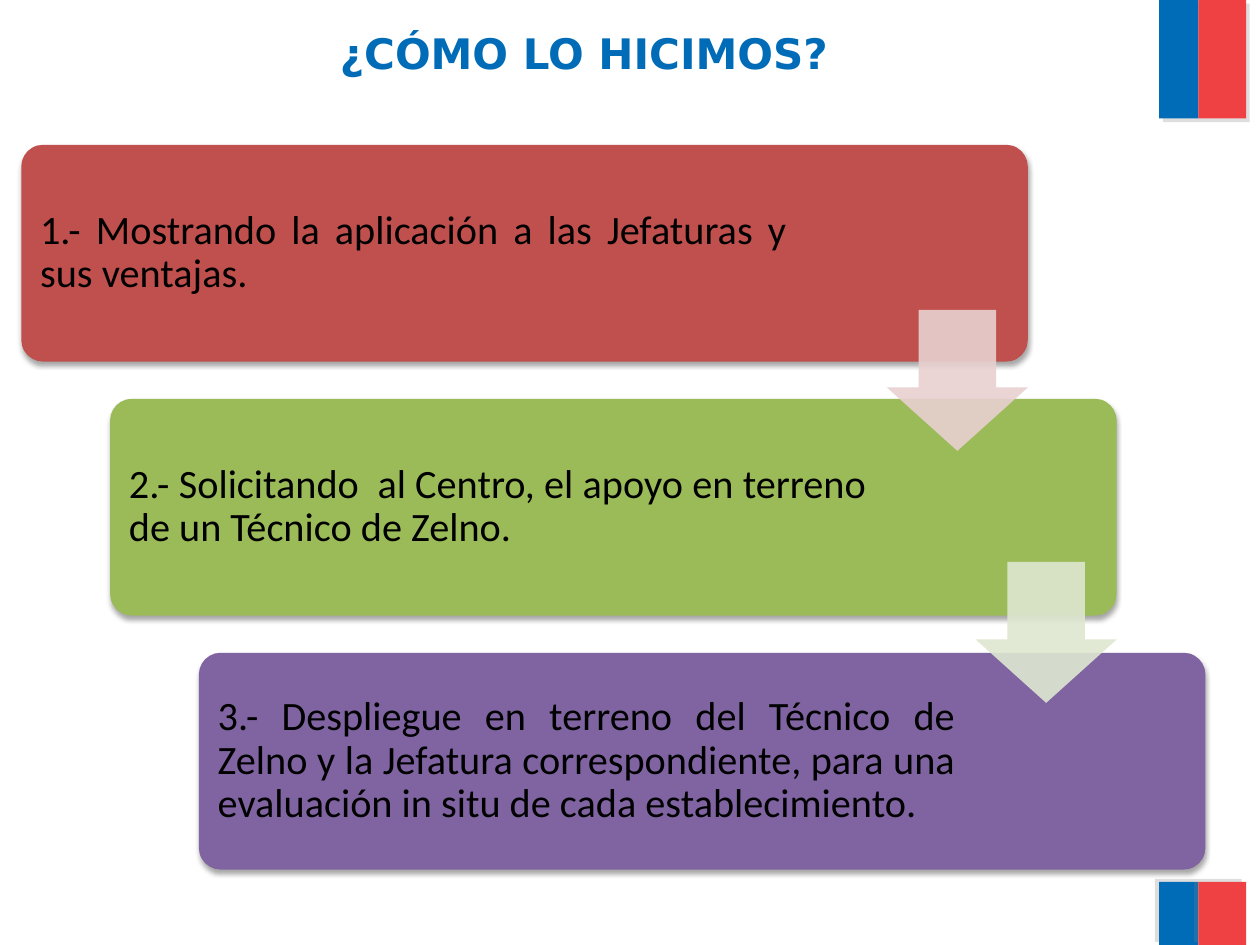
from dataclasses import dataclass

from pptx import Presentation
from pptx.dml.color import RGBColor
from pptx.enum.shapes import MSO_SHAPE
from pptx.enum.text import MSO_ANCHOR, PP_ALIGN
from pptx.oxml import parse_xml
from pptx.oxml.ns import nsdecls
from pptx.util import Cm, Pt


@dataclass(frozen=True)
class Theme:
    blue: str = "006CB7"
    red: str = "EF4144"
    ink: str = "000000"
    steps: tuple = ("C0504D", "9BBB59", "8064A2")
    hints: tuple = ("E8D0D0", "DEE7D1")
    head: str = "DejaVu Sans"
    body: str = "Calibri"
    big: float = 24
    mid: float = 23


THEME = Theme()
TEXTS = (
    "1.- Mostrando la aplicación a las Jefaturas y sus ventajas.",
    "2.- Solicitando  al Centro, el apoyo en terreno de un Técnico de Zelno.",
    "3.- Despliegue en terreno del Técnico de Zelno y la Jefatura "
    "correspondiente, para una evaluación in situ de cada establecimiento.",
)


def apply(item, style):
    for name, value in style.items():
        setattr(item, name, value)


def add_shade(shape, color, alpha, blur, dist, angle):
    """Give the shape an outer shadow: alpha in %, blur and dist in points."""
    props = shape._element.spPr
    for old in props.findall("{*}effectLst"):
        props.remove(old)
    props.append(parse_xml(
        f'<a:effectLst {nsdecls("a")}><a:outerShdw blurRad="{Pt(blur)}" '
        f'dist="{Pt(dist)}" dir="{angle * 60000}" algn="ctr" rotWithShape="0">'
        f'<a:srgbClr val="{color}"><a:alpha val="{alpha * 1000}"/></a:srgbClr>'
        '</a:outerShdw></a:effectLst>'))


def add_box(slide, kind, place, color, adjust=()):
    shape = slide.shapes.add_shape(kind, *map(Cm, place))
    shape.shadow.inherit = False
    shape.fill.solid()
    shape.fill.fore_color.rgb = RGBColor.from_string(color)
    shape.line.fill.background()
    for i, value in enumerate(adjust):
        shape.adjustments[i] = value
    return shape


def add_text(slide, place, text, frame, para, font, color):
    body = slide.shapes.add_textbox(*map(Cm, place)).text_frame
    apply(body, {"word_wrap": True, **frame})
    line = body.paragraphs[0]
    apply(line, para)
    run = line.add_run()
    run.text = text
    apply(run.font, font)
    run.font.color.rgb = RGBColor.from_string(color)


def add_flag(slide, top, high, angle):
    for left, wide, color in ((23.37, 0.79, THEME.blue), (24.16, 0.96, THEME.red)):
        bar = add_box(slide, MSO_SHAPE.RECTANGLE, (left, top, wide, high), color)
        add_shade(bar, "808080", 25, 0, 3, angle)


def add_step(slide, i, text):
    left, top = 0.43 + 1.79 * i, 2.92 + 5.12 * i
    card = add_box(slide, MSO_SHAPE.ROUNDED_RECTANGLE, (left, top, 20.29, 4.37),
                   THEME.steps[i], [0.1])
    add_shade(card, "000000", 35, 3.1, 1.8, 90)
    wide = 15.39 if i else 15.57
    sides = ("left", "right", "top", "bottom")
    frame = {f"margin_{side}": Cm(0.25) for side in sides}
    add_text(slide, (left + 0.13, top + 0.13, wide, 4.11), text,
             {"vertical_anchor": MSO_ANCHOR.MIDDLE, **frame},
             {"alignment": PP_ALIGN.JUSTIFY, "line_spacing": 0.9},
             {"size": Pt(THEME.mid), "name": THEME.body}, THEME.ink)


def add_arrow(slide, i, color):
    arrow = add_box(slide, MSO_SHAPE.DOWN_ARROW,
                    (17.88 + 1.79 * i, 6.25 + 5.08 * i, 2.84, 2.84),
                    color, [0.55, 0.45])
    # The adjustments of this preset run: shaft width, then head length
    tint = arrow._element.spPr.find("{*}solidFill")[0]
    tint.append(parse_xml(f'<a:alpha {nsdecls("a")} val="90000"/>'))


def main():
    deck = Presentation()
    apply(deck, {"slide_width": Cm(25.4), "slide_height": Cm(19.05)})
    slide = deck.slides.add_slide(deck.slide_layouts[6])

    # Corner flags
    add_flag(slide, 0, 2.39, 45)
    add_flag(slide, 17.78, 1.27, 215)

    # Title
    add_text(slide, (0.43, 0.43, 22.68, 1.91), "¿CÓMO LO HICIMOS?",
             {"vertical_anchor": MSO_ANCHOR.TOP},
             {"alignment": PP_ALIGN.CENTER},
             {"size": Pt(THEME.big), "name": THEME.head, "bold": True},
             THEME.blue)

    # Stair of steps, with the arrows in front
    for i, text in enumerate(TEXTS):
        add_step(slide, i, text)
    for i, color in enumerate(THEME.hints):
        add_arrow(slide, i, color)

    deck.save("out.pptx")


if __name__ == "__main__":
    main()
